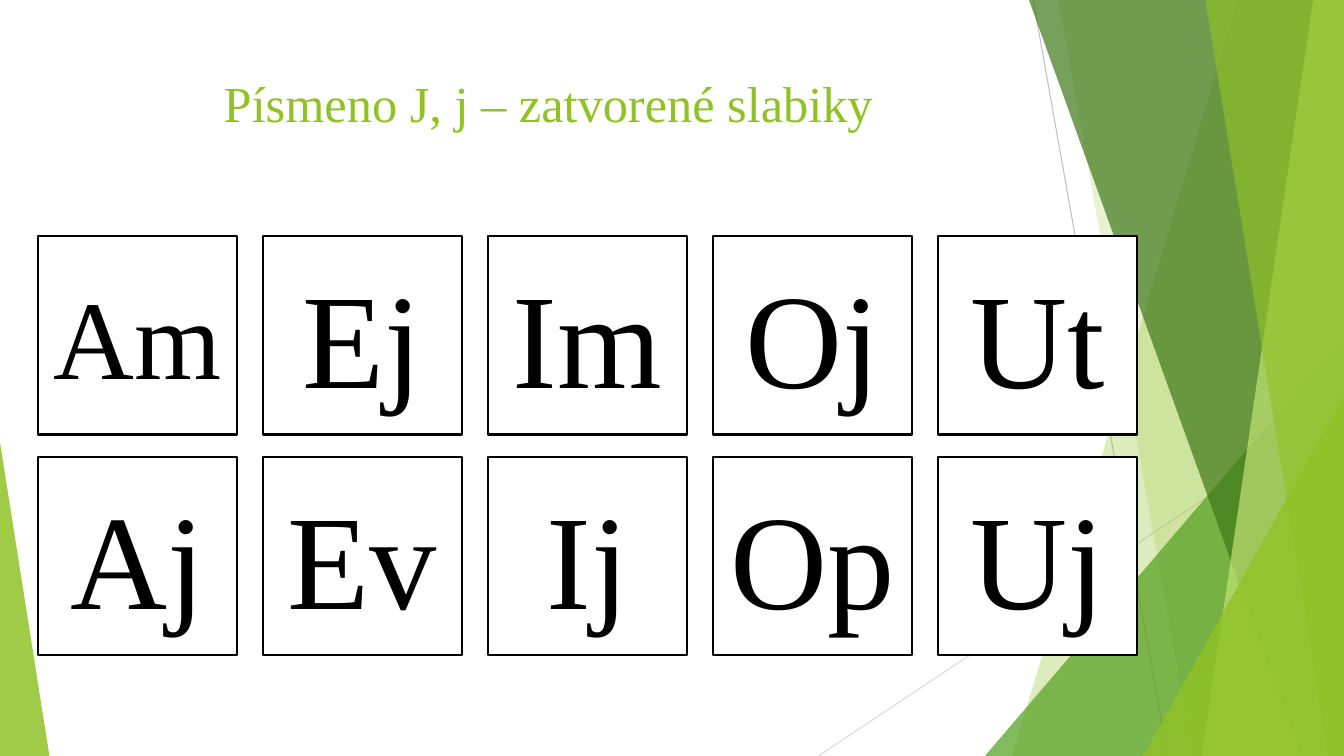
"""Build a reading slide with ten cards of closed syllables."""
from pptx import Presentation
from pptx.dml.color import RGBColor
from pptx.enum.shapes import MSO_CONNECTOR as Conn, MSO_SHAPE as Kind
from pptx.enum.text import MSO_ANCHOR as Anchor, PP_ALIGN as Align
from pptx.oxml.ns import qn
from pptx.util import Pt
from lxml.etree import SubElement

LIME = RGBColor(0x90, 0xC2, 0x26)
GREEN = RGBColor(0x54, 0xA0, 0x21)
DARK = RGBColor(0x3F, 0x78, 0x19)
PALE = RGBColor(0xC0, 0xE4, 0x74)
GREY = RGBColor(0xBF, 0xBF, 0xBF)
LIGHT = RGBColor(0xD9, 0xD9, 0xD9)
BLACK = RGBColor(0, 0, 0)
WHITE = RGBColor(0xFF, 0xFF, 0xFF)
FONT = "Times New Roman"
WIDE, HIGH = 960, 540


def paint(shape, color, alpha):
    shape.shadow.inherit = False
    shape.fill.solid()
    shape.fill.fore_color.rgb = color
    shape.line.fill.background()
    tone = shape.fill._xPr.find(qn("a:solidFill"))[0]
    SubElement(tone, qn("a:alpha"), val=str(alpha * 1000))


def style(para, size, color):
    para.alignment = Align.CENTER
    para.font.name = FONT
    para.font.size = Pt(size)
    para.font.color.rgb = color


deck = Presentation()
deck.slide_width, deck.slide_height = Pt(WIDE), Pt(HIGH)
slide = deck.slides.add_slide(deck.slide_layouts[5])
shapes = slide.shapes

title = shapes.title
title.left, title.top, title.width, title.height = Pt(53.3), Pt(48), Pt(677), Pt(104)
title.text_frame.text = "Písmeno J, j – zatvorené slabiky"
title.text_frame.vertical_anchor = Anchor.TOP
style(title.text_frame.paragraphs[0], 36, LIME)

for x1, y1, x2, y2, color in [(738, 0, 834, HIGH, GREY), (WIDE, 290, 584.6, HIGH, LIGHT)]:
    line = shapes.add_connector(Conn.STRAIGHT, Pt(x1), Pt(y1), Pt(x2), Pt(y2))
    line.line.color.rgb = color
    line.line.width = Pt(0.75)
    SubElement(line._element.spPr, qn("a:effectLst"))

facets = [
    ("band", 884, 723, LIME, 30),
    ("band", 756, 852, LIME, 20),
    ("peak", 703.5, 240, LIME, 0),
    ("band", 735, 929.5, DARK, 70),
    ("band", 938, 858.5, PALE, 70),
    ("band", 861, 949, LIME, 65),
    ("peak", 816.5, 283, LIME, 80),
]
facets[2] = ("peak", 703.5, 240, GREEN, 72)
for kind, start, end, color, alpha in facets:
    if kind == "band":
        form = shapes.build_freeform(Pt(start), 0)
        form.add_line_segments([(Pt(WIDE), 0), (Pt(WIDE), Pt(HIGH)), (Pt(end), Pt(HIGH))])
        facet = form.convert_to_shape()
    else:
        facet = shapes.add_shape(Kind.ISOSCELES_TRIANGLE, Pt(start), Pt(end),
                                 Pt(WIDE - start), Pt(HIGH - end))
        facet.adjustments[0] = 1
    paint(facet, color, alpha)

edge = shapes.add_shape(Kind.ISOSCELES_TRIANGLE, 0, Pt(316), Pt(35.3), Pt(224))
edge.adjustments[0] = 0
paint(edge, LIME, 85)

rows = [["Am", "Ej", "Im", "Oj", "Ut"], ["Aj", "Ev", "Ij", "Op", "Uj"]]
for row, words in enumerate(rows):
    for col, word in enumerate(words):
        card = shapes.add_shape(Kind.RECTANGLE, Pt(27.2 + 160.7 * col),
                                Pt(168.4 + 157.8 * row), Pt(142), Pt(142))
        card.shadow.inherit = False
        card.fill.solid()
        card.fill.fore_color.rgb = WHITE
        card.line.color.rgb = BLACK
        card.line.width = Pt(1.5)
        card.text_frame.text = word
        card.text_frame.vertical_anchor = Anchor.MIDDLE
        para = card.text_frame.paragraphs[0]
        para.space_before = Pt(10)
        style(para, 80 if word == "Am" else 96, BLACK)

deck.save("out.pptx")
